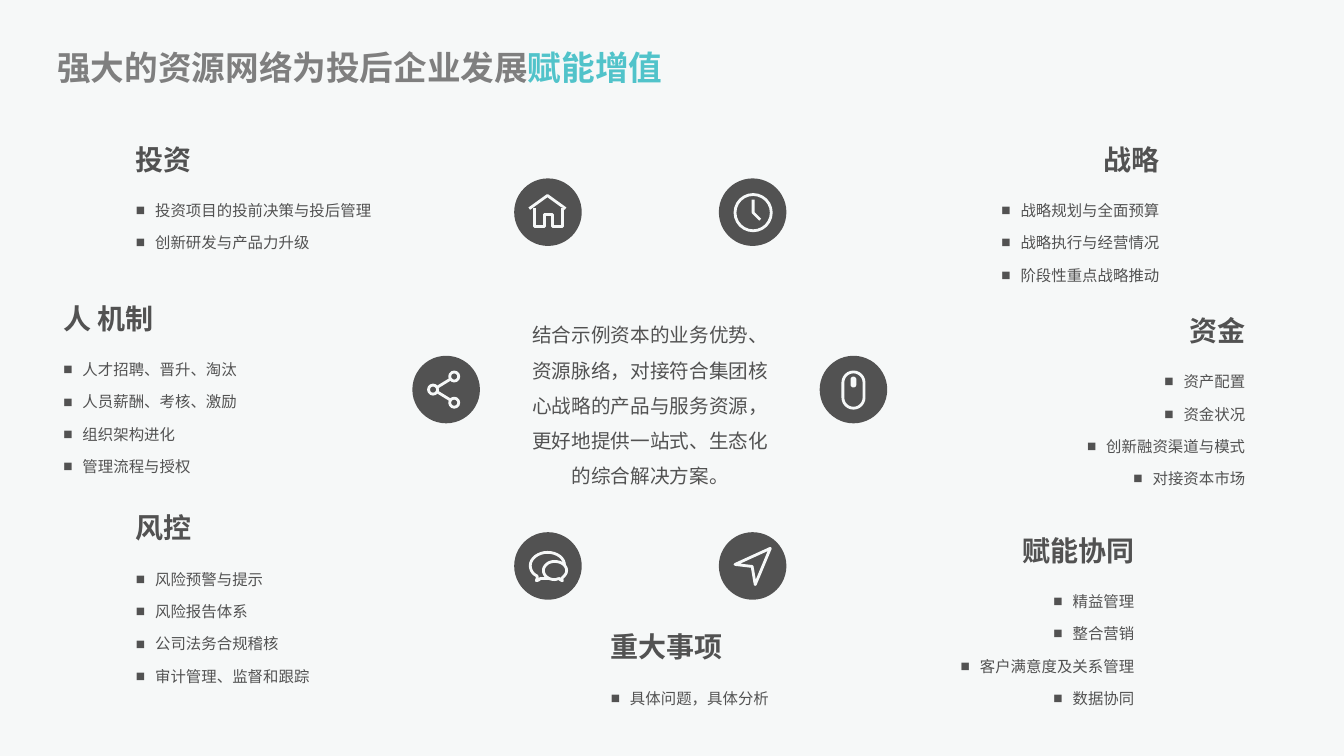
from lxml import etree
from pptx import Presentation
from pptx import util as u
from pptx.dml.color import RGBColor
from pptx.enum import shapes, text
from pptx.oxml.ns import qn

DARK, PALE, GREY, TEAL = "525252", "F6F8F8", "7F7F7F", "51C3CA"
LEFT, CENTER, RIGHT = text.PP_ALIGN.LEFT, text.PP_ALIGN.CENTER, text.PP_ALIGN.RIGHT
LATIN, CHINESE = "Open Sans", "Noto Sans CJK SC"
DISC = 0.67

TOPICS = [
    (1.25, 1.36, LEFT, "投资", ["投资项目的投前决策与投后管理", "创新研发与产品力升级"]),
    (1.25, 5.02, LEFT, "风控", ["风险预警与提示", "风险报告体系", "公司法务合规稽核", "审计管理、监督和跟踪"]),
    (0.53, 2.94, LEFT, "人 机制", ["人才招聘、晋升、淘汰", "人员薪酬、考核、激励", "组织架构进化", "管理流程与授权"]),
    (8.46, 1.36, RIGHT, "战略", ["战略规划与全面预算", "战略执行与经营情况", "阶段性重点战略推动"]),
    (8.21, 5.24, RIGHT, "赋能协同", ["精益管理", "整合营销", "客户满意度及关系管理", "数据协同"]),
    (9.31, 3.06, RIGHT, "资金", ["资产配置", "资金状况", "创新融资渠道与模式", "对接资本市场"]),
    (5.96, 6.2, LEFT, "重大事项", ["具体问题，具体分析"]),
]
HAND = [(7.47, 1.98), (7.47, 2.11), (7.54, 2.18)]
ROOF = [(5.61, 2.07), (5.43, 1.94), (5.25, 2.07)]
WALLS = [(5.58, 2.06), (5.58, 2.25), (5.48, 2.25), (5.48, 2.13),
         (5.4, 2.13), (5.4, 2.25), (5.3, 2.25), (5.3, 2.06)]
PLANE = [(7.49, 5.8), (7.64, 5.44), (7.29, 5.6), (7.46, 5.62)]
BACK_BUBBLE = [(5.46, 5.74), (5.45, 5.74), (5.44, 5.74), (5.43, 5.74), (5.41, 5.74),
               (5.39, 5.74), (5.37, 5.74), (5.36, 5.73), (5.35, 5.76), (5.32, 5.76),
               (5.32, 5.76), (5.34, 5.72), (5.32, 5.71), (5.28, 5.69), (5.26, 5.65),
               (5.26, 5.61), (5.26, 5.54), (5.34, 5.48), (5.43, 5.48), (5.53, 5.48),
               (5.6, 5.54), (5.6, 5.61)]
FRONT_BUBBLE = [(5.39, 5.66), (5.39, 5.71), (5.44, 5.75), (5.5, 5.75), (5.52, 5.75),
                (5.53, 5.74), (5.55, 5.74), (5.55, 5.74), (5.56, 5.76), (5.58, 5.76),
                (5.58, 5.76), (5.56, 5.74), (5.58, 5.73), (5.6, 5.71), (5.62, 5.69),
                (5.62, 5.66), (5.62, 5.61), (5.57, 5.57), (5.5, 5.57), (5.44, 5.57),
                (5.39, 5.61), (5.39, 5.66)]


def color(value):
    return RGBColor.from_string(value)


def curve(points, steps=8):
    result = [points[0]]
    for i in range(0, len(points) - 1, 3):
        corners = points[i:i + 4]
        for step in range(1, steps + 1):
            t = step / steps
            weights = ((1 - t) ** 3, 3 * t * (1 - t) ** 2, 3 * t * t * (1 - t), t ** 3)
            result.append(tuple(sum(w * corner[axis] for w, corner in zip(weights, corners))
                                for axis in (0, 1)))
    return result


class Board:
    def __init__(self, slide):
        self.slide = slide
        self.icon = None
        slide.background.fill.solid()
        slide.background.fill.fore_color.rgb = color(PALE)

    def text_box(self, left, top, width, height, inset=0.1):
        shape = self.slide.shapes.add_textbox(*map(u.Inches, (left, top, width, height)))
        frame = shape.text_frame
        frame.word_wrap = True
        frame.auto_size = text.MSO_AUTO_SIZE.SHAPE_TO_FIT_TEXT
        frame.margin_left = frame.margin_right = u.Inches(inset)
        frame.margin_top = frame.margin_bottom = u.Inches(0.05)
        return frame

    def run(self, paragraph, words, size, fill=DARK, bold=False, font=LATIN):
        run = paragraph.add_run()
        run.text = words
        run.font.size = u.Pt(size)
        run.font.bold = bold
        run.font.color.rgb = color(fill)
        run.font.name = font
        etree.SubElement(run.font._element, qn("a:ea"), typeface=CHINESE)

    def bullet(self, paragraph):
        properties = paragraph._p.get_or_add_pPr()
        indent = u.Inches(0.19)
        properties.set("marL", str(indent))
        properties.set("indent", str(-indent))
        etree.SubElement(properties, qn("a:buFont"), typeface="Arial")
        etree.SubElement(properties, qn("a:buChar"), char="■")

    def topic(self, left, top, align, heading, items):
        paragraph = self.text_box(left, top, 3.14, 0.44).paragraphs[0]
        paragraph.alignment = align
        paragraph.space_before = u.Pt(6)
        self.run(paragraph, heading, 20, bold=True)
        frame = self.text_box(left, top + 0.53, 3.14, 0.02 + 0.325 * len(items))
        for i, item in enumerate(items):
            paragraph = frame.add_paragraph() if i else frame.paragraphs[0]
            paragraph.alignment = align
            paragraph.line_spacing = u.Pt(17.1)
            paragraph.space_before = u.Pt(6)
            self.bullet(paragraph)
            self.run(paragraph, item, 11)

    def outline(self, line):
        line.color.rgb = color(PALE)
        line.width = u.Pt(2)

    def paint(self, shape, outlined=True):
        shape.shadow.inherit = False
        shape.fill.solid()
        shape.fill.fore_color.rgb = color(DARK)
        if outlined:
            self.outline(shape.line)
        else:
            shape.line.fill.background()

    def disc(self, left, top):
        self.icon = self.slide.shapes.add_group_shape().shapes
        self.preset(left, top, DISC, DISC, outlined=False)

    def preset(self, left, top, width, height, kind=shapes.MSO_SHAPE.OVAL, outlined=True):
        shape = self.icon.add_shape(kind, *map(u.Inches, (left, top, width, height)))
        if kind == shapes.MSO_SHAPE.ROUNDED_RECTANGLE:
            shape.adjustments[0] = 0.5
        self.paint(shape, outlined)

    def outlined_path(self, points, close=False):
        points = [(u.Inches(x), u.Inches(y)) for x, y in points]
        builder = self.icon.build_freeform(*points[0])
        builder.add_line_segments(points[1:], close=close)
        self.paint(builder.convert_to_shape())

    def link(self, *ends):
        connector = self.icon.add_connector(shapes.MSO_CONNECTOR.STRAIGHT, *map(u.Inches, ends))
        self.outline(connector.line)
        etree.SubElement(connector._element.spPr, qn("a:effectLst"))


def draw_icons(board):
    board.disc(7.13, 1.77)
    board.preset(7.29, 1.93, 0.36, 0.36)
    board.outlined_path(HAND)

    board.disc(5.1, 1.77)
    board.outlined_path(ROOF)
    board.outlined_path(WALLS)

    board.disc(4.09, 3.53)
    for left, top in ((4.46, 3.69), (4.25, 3.82), (4.46, 3.95)):
        board.preset(left, top, 0.09, 0.09)
    board.link(4.34, 3.89, 4.47, 3.97)
    board.link(4.34, 3.84, 4.47, 3.76)

    board.disc(8.13, 3.53)
    for box in ((8.36, 3.69, 0.21, 0.36), (8.45, 3.75, 0.03, 0.08)):
        board.preset(*box, kind=shapes.MSO_SHAPE.ROUNDED_RECTANGLE)

    board.disc(7.13, 5.28)
    board.outlined_path(PLANE, close=True)

    board.disc(5.1, 5.28)
    board.outlined_path(curve(BACK_BUBBLE))
    board.outlined_path(curve(FRONT_BUBBLE), close=True)


def main():
    presentation = Presentation()
    presentation.slide_width = u.Inches(13.33)
    presentation.slide_height = u.Inches(7.5)
    board = Board(presentation.slides.add_slide(presentation.slide_layouts[6]))

    title = board.text_box(0.46, 0.46, 6.67, 0.47, inset=0.11).paragraphs[0]
    title.line_spacing = 0.9
    board.run(title, "强大的资源网络为投后企业发展", 24, GREY, True, CHINESE)
    board.run(title, "赋能增值", 24, TEAL, True, "Arial")

    for topic in TOPICS:
        board.topic(*topic)
    draw_icons(board)

    summary = board.text_box(5.1, 3.04, 2.7, 1.87).paragraphs[0]
    summary.alignment = CENTER
    summary.line_spacing = u.Pt(25.2)
    summary.space_before = u.Pt(6)
    board.run(summary, "结合示例资本的业务优势、资源脉络，对接符合集团核心战略的产品与服务资源，"
                       "更好地提供一站式、生态化的综合解决方案。", 14)
    presentation.save("out.pptx")


if __name__ == "__main__":
    main()
